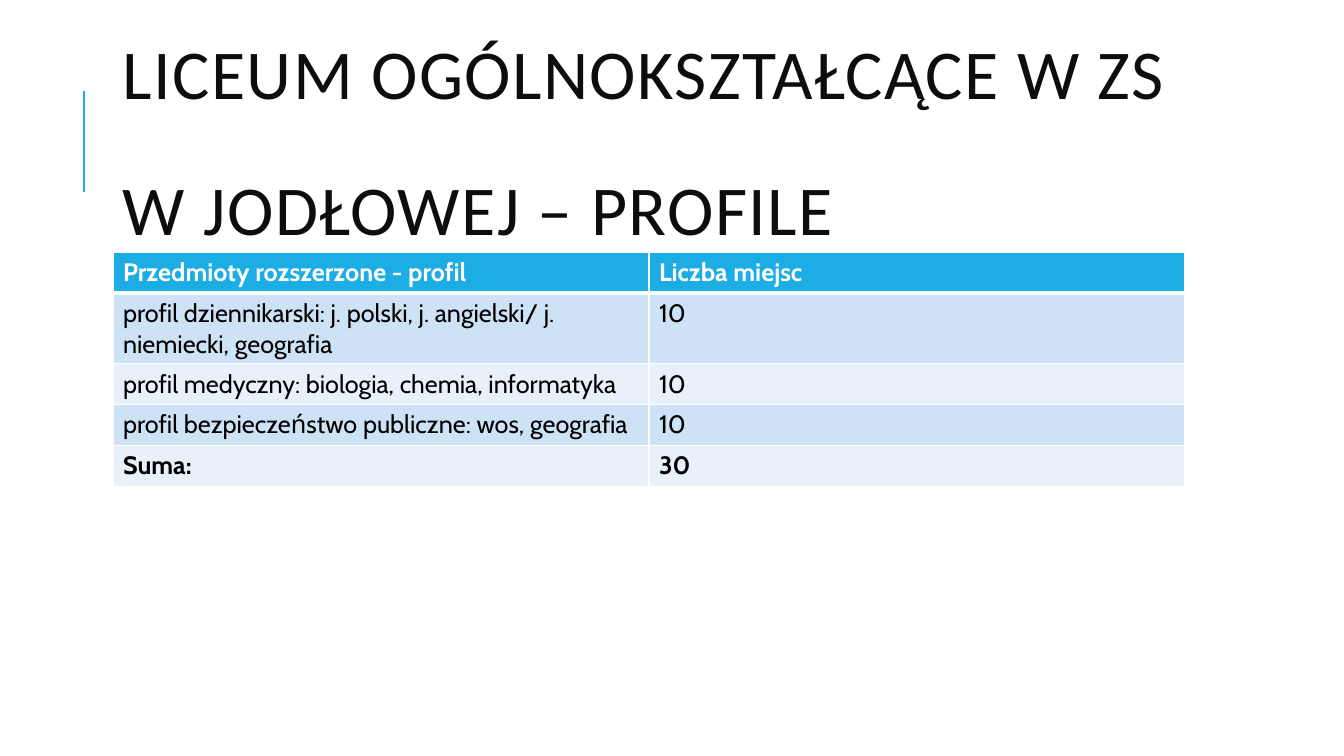
from lxml.etree import SubElement
from pptx import Presentation
from pptx.dml.color import RGBColor as Rgb
from pptx.enum.shapes import MSO_CONNECTOR as Conn
from pptx.enum.text import MSO_ANCHOR as Anchor
from pptx.oxml.ns import qn
from pptx.util import Pt

UNIT = 914400 / 100.8
HUES = {"blue": "1CADE4", "dark": "CDE3F5", "pale": "E8F1FA",
        "white": "FFFFFF", "black": "000000", "ink": "0D0D0D"}
TITLE = ["LICEUM OGÓLNOKSZTAŁCĄCE W ZS", "W JODŁOWEJ – PROFILE"]
ROWS = [
    ("Przedmioty rozszerzone - profil", "Liczba miejsc"),
    ("profil dziennikarski: j. polski, j. angielski/ j. niemiecki, geografia", "10"),
    ("profil medyczny: biologia, chemia, informatyka", "10"),
    ("profil bezpieczeństwo publiczne: wos, geografia", "10"),
    ("Suma:", "30"),
]


def px(num):
    """Turn px into EMU."""
    return round(num * UNIT)


def hue(name):
    """Look up a colour by name."""
    return Rgb.from_string(HUES[name])


def write(para, text, face, size, tint, bold=False):
    """Add one styled run to a paragraph."""
    run = para.add_run()
    run.text = text
    font = run.font
    font.name, font.size, font.bold = face, Pt(size), bold
    font.color.rgb = hue(tint)
    return run


def edge(cell, side, width):
    """Draw a white border on one side of a cell."""
    line = SubElement(cell._tc.get_or_add_tcPr(), qn("a:" + side), w=str(Pt(width)))
    fill = SubElement(line, qn("a:solidFill"))
    SubElement(fill, qn("a:srgbClr"), val=HUES["white"])


def add_rule(slide, left, top, high):
    """Draw the upright accent line beside the title."""
    rule = slide.shapes.add_connector(
        Conn.STRAIGHT, px(left), px(top + high), px(left), px(top))
    rule.line.color.rgb = hue("blue")
    rule.line.width = Pt(1.5)
    SubElement(rule._element.spPr, qn("a:effectLst"))


def add_title(slide, left, top, wide, high):
    """Place the two title lines, centred in height."""
    frame = slide.shapes.add_textbox(px(left), px(top), px(wide), px(high)).text_frame
    frame.word_wrap = True
    frame.vertical_anchor = Anchor.MIDDLE
    for num, text in enumerate(TITLE):
        para = frame.add_paragraph() if num else frame.paragraphs[0]
        para.line_spacing = 0.8
        if num:
            para.space_before = Pt(49)
        run = write(para, text, "Calibri", 50, "ink")
        run.font._element.set("spc", "100")


def add_grid(slide, left, top, wide, step):
    """Place the table of profiles with equal columns and rows."""
    count = len(ROWS)
    grid = slide.shapes.add_table(
        count, 2, px(left), px(top), px(wide), px(step * count)).table
    for row, texts in enumerate(ROWS):
        head = row == 0
        shade = "blue" if head else "dark" if row % 2 else "pale"
        for col, text in enumerate(texts):
            cell = grid.cell(row, col)
            write(cell.text_frame.paragraphs[0], text, "Cabin", 18,
                  "white" if head else "black", row in (0, count - 1))
            for side in ("lnL", "lnR", "lnT", "lnB"):
                thick = (head and side == "lnB") or (row == 1 and side == "lnT")
                edge(cell, side, 3 if thick else 1)
            cell.fill.solid()
            cell.fill.fore_color.rgb = hue(shade)


def main():
    """Build the slide and save it."""
    deck = Presentation()
    deck.slide_width, deck.slide_height = px(1344), px(756)
    slide = deck.slides.add_slide(deck.slide_layouts[6])
    add_rule(slide, 84, 91, 101)
    add_title(slide, 113, 65, 1072, 165)
    add_grid(slide, 113, 252, 1072, 41)
    deck.save("out.pptx")


if __name__ == "__main__":
    main()
